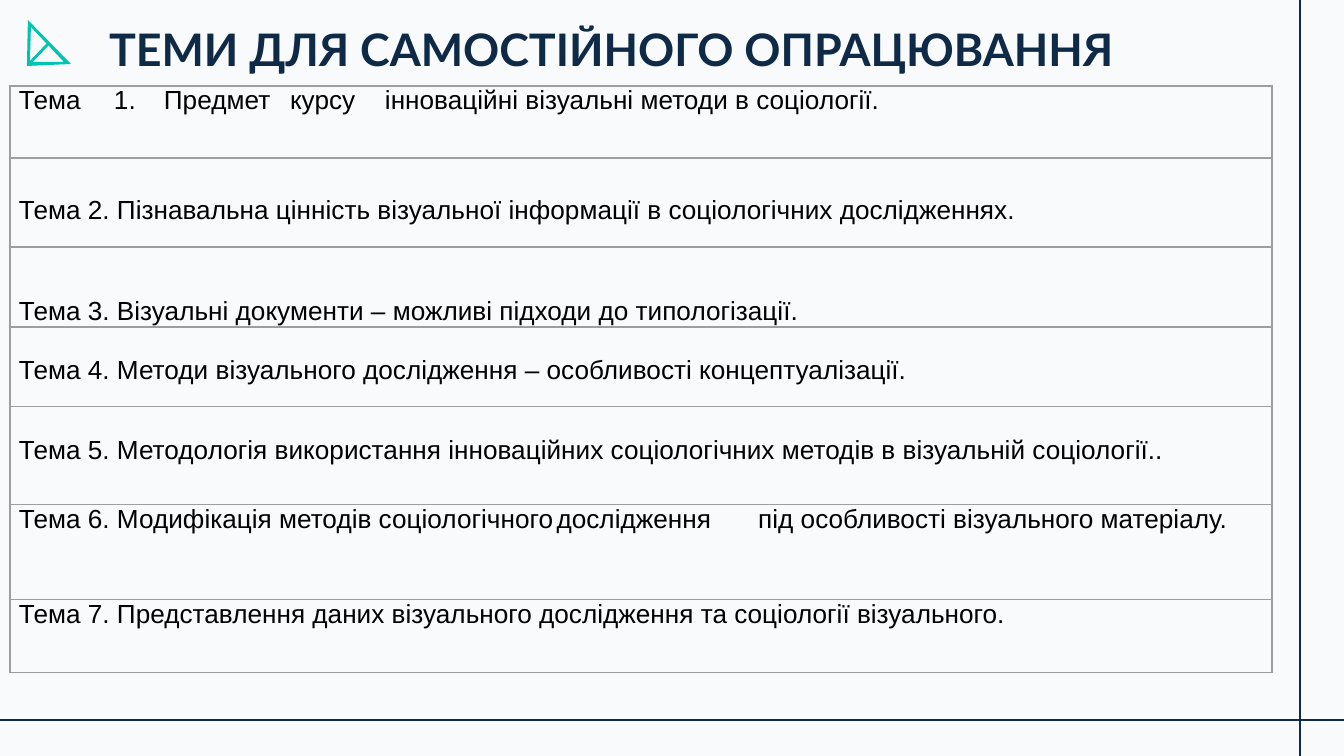
from dataclasses import dataclass

import lxml.etree
import pptx
import pptx.dml.color
import pptx.enum.shapes
import pptx.enum.text
import pptx.oxml
import pptx.oxml.ns
import pptx.util

EMU_PER_PX = 914400 / 134.4
SLIDE_WIDTH, SLIDE_HEIGHT = 1344, 756

BACKGROUND = pptx.dml.color.RGBColor(0xF8, 0xFA, 0xFB)
NAVY = pptx.dml.color.RGBColor(0x0E, 0x2A, 0x47)
TEAL = pptx.dml.color.RGBColor(0x00, 0xC3, 0xB1)
BLACK = pptx.dml.color.RGBColor(0x00, 0x00, 0x00)
GREY = pptx.dml.color.RGBColor(0x9E, 0x9E, 0x9E)

TABLE_LEFT, TABLE_WIDTH = 10, 1262
CELL_LEFT_INSET, CELL_RIGHT_INSET = 9, 8

Point = tuple[int, int]


@dataclass(frozen=True)
class Topic:
    text: str
    height: int
    top_inset: int = 0
    tabs: tuple[int, ...] = ()


@dataclass(frozen=True)
class TopicTable:
    top: int
    topics: tuple[Topic, ...]


TABLES = (
    TopicTable(86, (
        Topic("Тема\t1.\tПредмет\tкурсу\tінноваційні візуальні методи в соціології.",
              72, tabs=(95, 145, 271, 366)),
        Topic("Тема 2. Пізнавальна цінність візуальної інформації в соціологічних дослідженнях.",
              89, 38),
    )),
    TopicTable(247, (
        Topic("Тема 3. Візуальні документи – можливі підходи до типологізації.", 80, 50),
        Topic("Тема 4. Методи візуального дослідження – особливості концептуалізації.", 80, 29),
        Topic("Тема 5. Методологія використання інноваційних соціологічних методів "
              "в візуальній соціології..", 98, 29),
        Topic("Тема 6. Модифікація методів соціологічного\tдослідження\tпід особливості "
              "візуального матеріалу.", 95, tabs=(247, 460)),
        Topic("Тема 7. Представлення даних візуального дослідження та соціології візуального.",
              73),
    )),
)

GUIDE_LINES = (
    ((0, 720), (SLIDE_WIDTH, 720)),
    ((1300, 0), (1300, SLIDE_HEIGHT)),
)

TRIANGLE_FRAME = (
    ((31, 27), (64, 62), (30, 62)),
    ((28, 20), (27, 66), (71, 64)),
)
TRIANGLE_BAR = (((48, 42), (27, 64), (29, 66), (50, 44)),)


def px(length: int) -> pptx.util.Emu:
    return pptx.util.Emu(round(length * EMU_PER_PX))


def add_guide_line(slide: pptx.slide.Slide, start: Point, end: Point) -> None:
    connector = slide.shapes.add_connector(
        pptx.enum.shapes.MSO_CONNECTOR.STRAIGHT, *map(px, start + end))
    connector.line.color.rgb = NAVY
    connector.line.width = pptx.util.Pt(0.75)
    properties = connector._element.spPr
    lxml.etree.SubElement(properties, pptx.oxml.ns.qn("a:effectLst"))


def add_outline(slide: pptx.slide.Slide, contours: tuple[tuple[Point, ...], ...]) -> None:
    """Draw one filled shape; a contour wound the other way is a hole."""
    builder = slide.shapes.build_freeform(*contours[0][0], scale=EMU_PER_PX)
    for index, contour in enumerate(contours):
        if index:
            builder.move_to(*contour[0])
        builder.add_line_segments(contour[1:], close=True)
    shape = builder.convert_to_shape()
    shape.shadow.inherit = False
    shape.fill.solid()
    shape.fill.fore_color.rgb = TEAL
    shape.line.fill.background()


def format_title(slide: pptx.slide.Slide, text: str) -> None:
    title = slide.shapes.title
    title.left, title.top, title.width, title.height = map(px, (81, -13, 1133, 85))
    frame = title.text_frame
    frame.text = text
    frame.vertical_anchor = pptx.enum.text.MSO_ANCHOR.TOP
    frame.auto_size = pptx.enum.text.MSO_AUTO_SIZE.NONE
    frame.margin_left, frame.margin_top = px(28), px(35)
    frame.margin_right = frame.margin_bottom = 0
    paragraph = frame.paragraphs[0]
    paragraph.alignment = pptx.enum.text.PP_ALIGN.LEFT
    paragraph.line_spacing = 1.0
    paragraph.space_before = pptx.util.Pt(0)
    paragraph.font.name = "Lato"
    paragraph.font.size = pptx.util.Pt(24)
    paragraph.font.bold = True
    paragraph.font.color.rgb = NAVY


def add_borders(cell: pptx.table._Cell) -> None:
    properties = cell._tc.get_or_add_tcPr()
    for side in ("lnL", "lnR", "lnT", "lnB"):
        properties.append(pptx.oxml.parse_xml(
            f'<a:{side} {pptx.oxml.ns.nsdecls("a")} w="{pptx.util.Pt(0.75)}">'
            f'<a:solidFill><a:srgbClr val="{GREY}"/></a:solidFill></a:{side}>'))


def add_tab_stops(paragraph: pptx.text.text._Paragraph, tabs: tuple[int, ...]) -> None:
    properties = paragraph._p.get_or_add_pPr()
    tab_list = lxml.etree.SubElement(properties, pptx.oxml.ns.qn("a:tabLst"))
    for position in tabs:
        lxml.etree.SubElement(tab_list, pptx.oxml.ns.qn("a:tab"),
                              pos=str(px(position)), algn="l")


def fill_cell(cell: pptx.table._Cell, topic: Topic) -> None:
    cell.margin_left, cell.margin_right = px(CELL_LEFT_INSET), px(CELL_RIGHT_INSET)
    cell.margin_top, cell.margin_bottom = px(topic.top_inset), 0
    add_borders(cell)
    cell.fill.background()
    cell.text = topic.text
    paragraph = cell.text_frame.paragraphs[0]
    paragraph.alignment = pptx.enum.text.PP_ALIGN.JUSTIFY
    if topic.tabs:
        add_tab_stops(paragraph, topic.tabs)
    paragraph.font.name = "Arial"
    paragraph.font.size = pptx.util.Pt(14)
    paragraph.font.color.rgb = BLACK


def add_topic_table(slide: pptx.slide.Slide, topic_table: TopicTable) -> None:
    topics = topic_table.topics
    height = sum(topic.height for topic in topics)
    table = slide.shapes.add_table(
        len(topics), 1,
        *map(px, (TABLE_LEFT, topic_table.top, TABLE_WIDTH, height))).table
    table.first_row = table.horz_banding = False
    for row, topic in zip(table.rows, topics):
        row.height = px(topic.height)
        fill_cell(row.cells[0], topic)


def main() -> None:
    presentation = pptx.Presentation()
    presentation.slide_width, presentation.slide_height = px(SLIDE_WIDTH), px(SLIDE_HEIGHT)
    slide = presentation.slides.add_slide(presentation.slide_layouts.get_by_name("Title Only"))
    slide.background.fill.solid()
    slide.background.fill.fore_color.rgb = BACKGROUND

    for start, end in GUIDE_LINES:
        add_guide_line(slide, start, end)
    format_title(slide, "ТЕМИ ДЛЯ САМОСТІЙНОГО ОПРАЦЮВАННЯ")
    for contours in (TRIANGLE_FRAME, TRIANGLE_BAR):
        add_outline(slide, contours)
    for topic_table in TABLES:
        add_topic_table(slide, topic_table)

    presentation.save("out.pptx")


if __name__ == "__main__":
    main()
